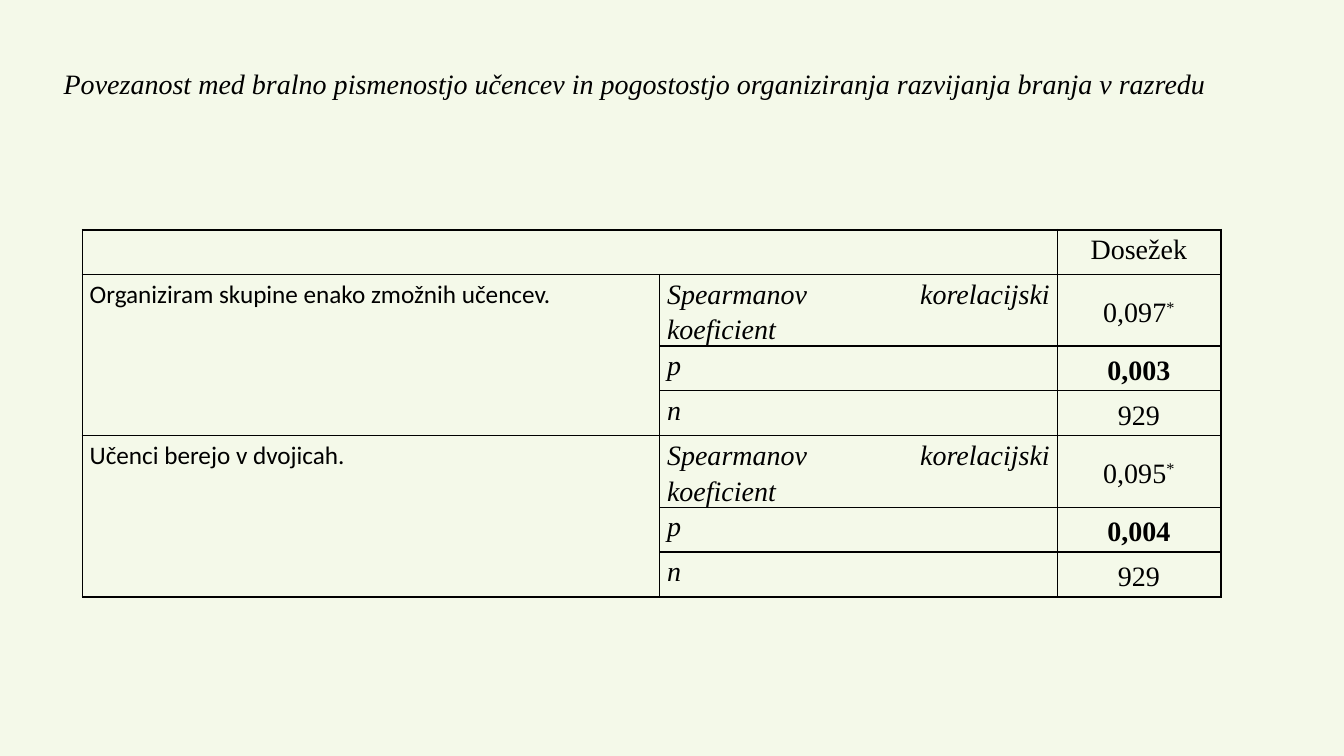
from lxml.etree import SubElement
from pptx import Presentation
from pptx.dml.color import RGBColor
from pptx.enum.text import MSO_ANCHOR as Anchor, PP_ALIGN as Align
from pptx.oxml.ns import qn
from pptx.util import Cm, Pt

COLORS = {"background": "F4F9E9", "ink": "000000"}
SERIF, SANS = "Times New Roman", "Calibri"
HEADING = ("Povezanost med bralno pismenostjo učencev in pogostostjo "
           "organiziranja razvijanja branja v razredu")
RESULT_HEADER = "Dosežek"
MEASURES = ("Spearmanov korelacijski koeficient", "p", "n")
ACTIVITIES = (
    ("Organiziram skupine enako zmožnih učencev.", ("0,097", "0,003", "929")),
    ("Učenci berejo v dvojicah.", ("0,095", "0,004", "929")),
)
COLUMN_WIDTHS = (14.55, 10.01, 4.12)
ROW_HEIGHT = 1.13
THIN, THICK = 1, 1.5


def add_span(para, text, font=SERIF, size=20, bold=False, italic=False):
    span = para.add_run()
    span.text = text
    span.font.name = font
    span.font.size = Pt(size)
    span.font.bold = bold
    span.font.italic = italic
    span.font.color.rgb = RGBColor.from_string(COLORS["ink"])
    return span


def add_heading(page, left, top, width, height):
    page.shapes.title.element.getparent().remove(page.shapes.title.element)
    box = page.placeholders[1]
    box.left, box.top, box.width, box.height = Cm(left), Cm(top), Cm(width), Cm(height)
    para = box.text_frame.paragraphs[0]
    para.line_spacing = 1.07
    para.space_before, para.space_after = Pt(0), Pt(10)
    add_span(para, HEADING, italic=True)
    properties = para._p.get_or_add_pPr()
    properties.set("marL", "0")
    properties.set("indent", "0")
    SubElement(properties, qn("a:buNone"))


def draw_borders(cell, widths):
    """Draw the four sides, given in points as left, right, top, bottom."""
    properties = cell._tc.get_or_add_tcPr()
    for side, width in zip("LRTB", widths):
        line = SubElement(properties, qn(f"a:ln{side}"), w=str(Pt(width)))
        fill = SubElement(line, qn("a:solidFill"))
        SubElement(fill, qn("a:srgbClr"), val=COLORS["ink"])


def style_cells(table):
    last_row, last_column = len(table.rows) - 1, len(table.columns) - 1
    for row in range(last_row + 1):
        for column in range(last_column + 1):
            cell = table.cell(row, column)
            bottom = row + cell.span_height - 1
            outer = (column == 0, column == last_column, row == 0, bottom == last_row)
            draw_borders(cell, [THICK if edge else THIN for edge in outer])
            cell.fill.background()
            cell.margin_left = cell.margin_right = Cm(0.18)
            cell.margin_top = cell.margin_bottom = Cm(0)


def start_paragraph(cell, align):
    para = cell.text_frame.paragraphs[0]
    para.alignment = align
    para.line_spacing = 1.15
    return para


def fill_activity(table, first_row, activity, values):
    label = table.cell(first_row, 0)
    label.merge(table.cell(first_row + len(MEASURES) - 1, 0))
    add_span(start_paragraph(label, Align.JUSTIFY), activity, SANS, 18)
    for row, (measure, value) in enumerate(zip(MEASURES, values), first_row):
        add_span(start_paragraph(table.cell(row, 1), Align.JUSTIFY), measure, italic=True)
        result = table.cell(row, 2)
        result.vertical_anchor = Anchor.MIDDLE
        para = start_paragraph(result, Align.CENTER)
        add_span(para, value, bold=measure == "p")
        if measure == MEASURES[0]:
            star = add_span(para, "*")
            star.font._element.set("baseline", "30000")


def add_correlation_table(page, left, top):
    row_count = 1 + len(ACTIVITIES) * len(MEASURES)
    table = page.shapes.add_table(
        row_count, len(COLUMN_WIDTHS), Cm(left), Cm(top),
        Cm(sum(COLUMN_WIDTHS)), Cm(row_count * ROW_HEIGHT)).table
    table.first_row = table.horz_banding = False
    for column, width in zip(table.columns, COLUMN_WIDTHS):
        column.width = Cm(width)
    table.cell(0, 0).merge(table.cell(0, 1))
    add_span(start_paragraph(table.cell(0, 2), Align.CENTER), RESULT_HEADER)
    for index, (activity, values) in enumerate(ACTIVITIES):
        fill_activity(table, 1 + index * len(MEASURES), activity, values)
    style_cells(table)


def main():
    deck = Presentation()
    deck.slide_width, deck.slide_height = Cm(33.87), Cm(19.05)
    page = deck.slides.add_slide(deck.slide_layouts[1])
    page.background.fill.solid()
    page.background.fill.fore_color.rgb = RGBColor.from_string(COLORS["background"])
    add_heading(page, 1.35, 1.5, 29.44, 2.31)
    add_correlation_table(page, 2.08, 5.79)
    deck.save("out.pptx")


if __name__ == "__main__":
    main()
